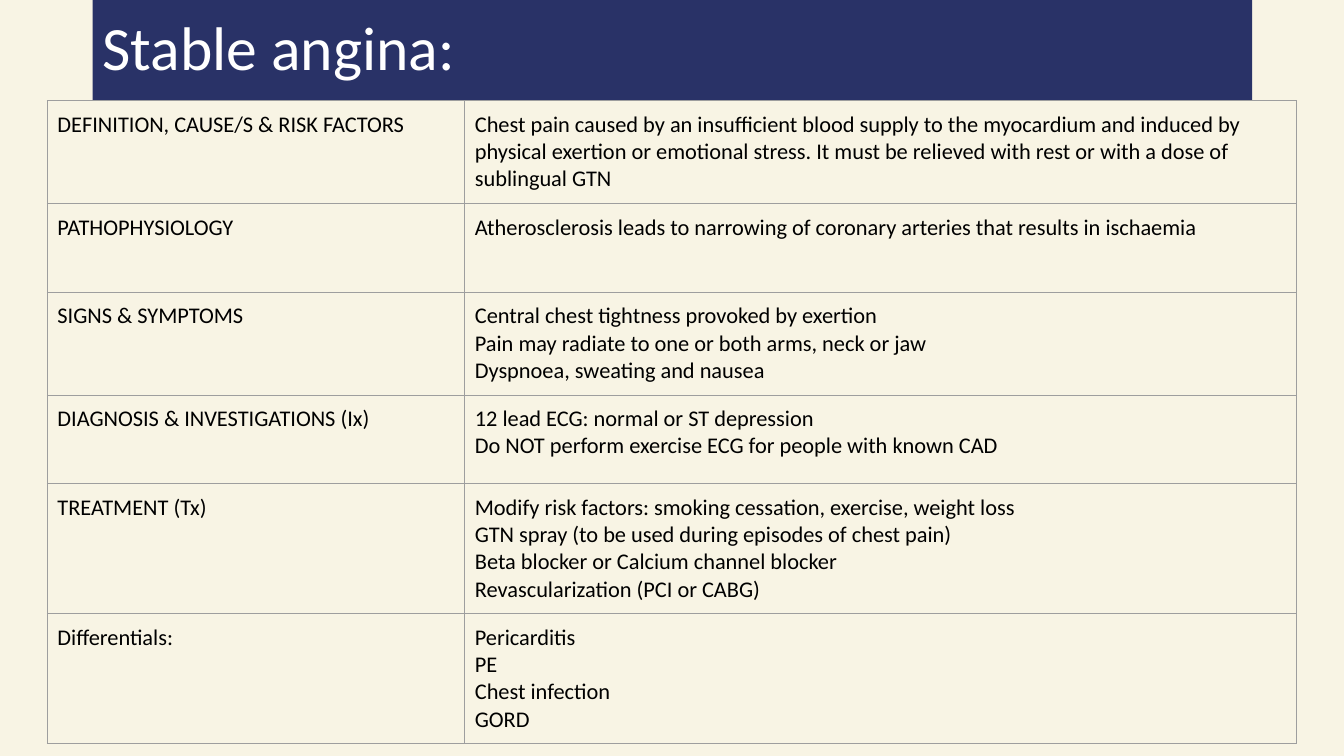
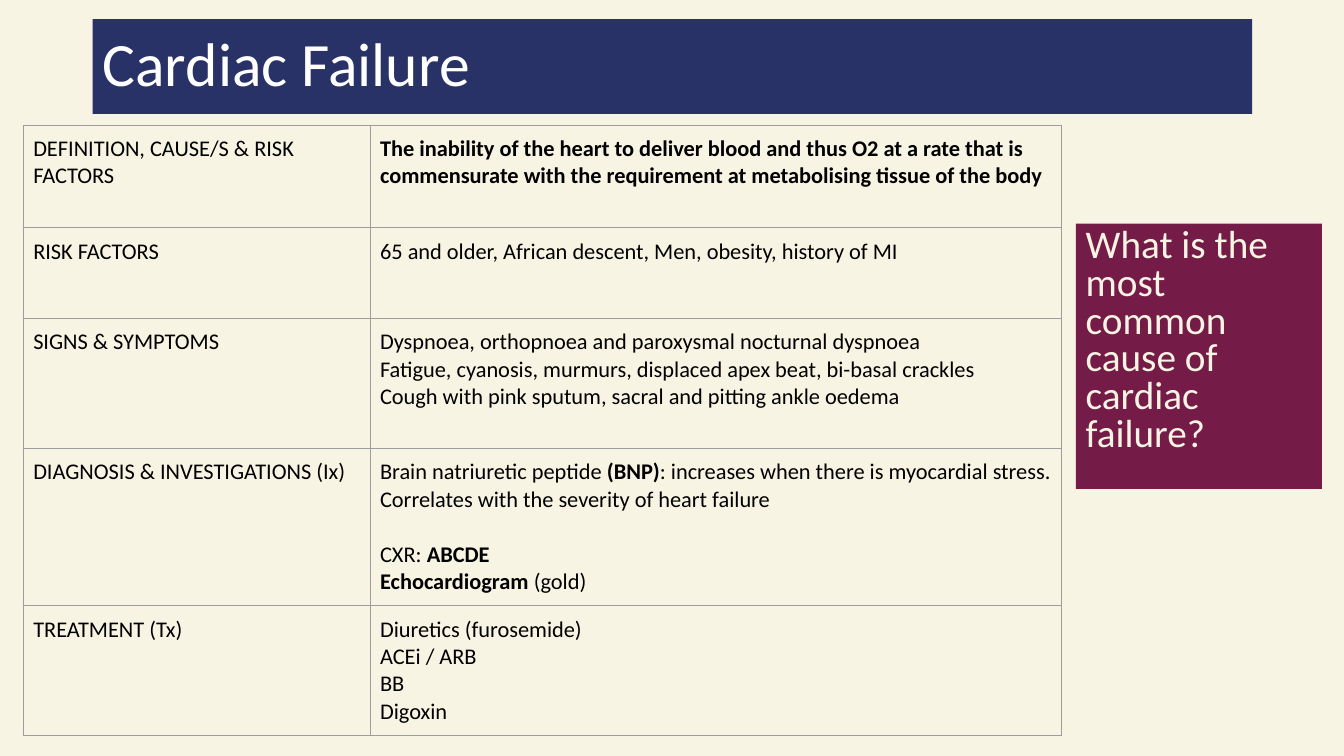
from dataclasses import dataclass

from lxml import etree
from pptx import Presentation
from pptx.dml.color import RGBColor
from pptx.enum import shapes, text
from pptx.oxml import ns
from pptx.util import Inches, Pt

CREAM = RGBColor(0xF8, 0xF4, 0xE4)
NAVY = RGBColor(0x29, 0x32, 0x67)
PLUM = RGBColor(0x74, 0x1B, 0x47)
WHITE = RGBColor(0xFF, 0xFF, 0xFF)
BLACK = RGBColor(0x00, 0x00, 0x00)
GREY = RGBColor(0x9E, 0x9E, 0x9E)

FONT = "Calibri"
BODY_SIZE = 16
BLANK_LAYOUT = 6
BOLD_MARK = "**"
GAP_MARK = "^"  # opens a line that stands one line lower
LINE_GAP = Pt(19.5)


@dataclass(frozen=True)
class Band:
    """A filled rectangle with one paragraph of text."""
    left: float
    top: float
    width: float
    height: float
    wording: str
    fill: RGBColor
    colour: RGBColor
    size: int
    line_spacing: float
    anchor: text.MSO_ANCHOR
    space_before: int = 0


@dataclass(frozen=True)
class Row:
    height: float
    heading: str
    details: tuple[str, ...]


@dataclass(frozen=True)
class Sheet:
    """A table of one condition; BOLD_MARK encloses bold words."""
    left: float
    top: float
    columns: tuple[float, float]
    rows: tuple[Row, ...]


def title_band(wording: str, top: float, height: float) -> Band:
    return Band(0.92, top, 11.5, height, wording, NAVY, WHITE, 44, 0.9,
                text.MSO_ANCHOR.MIDDLE)


ANGINA_TITLE = title_band("Stable angina:", 0, 1)
ANGINA = Sheet(0.47, 1, (4.14, 8.25), (
    Row(1.02, "DEFINITION, CAUSE/S & RISK FACTORS", (
        "Chest pain caused by an insufficient blood supply to the myocardium "
        "and induced by physical exertion or emotional stress. It must be "
        "relieved with rest or with a dose of sublingual GTN",)),
    Row(0.88, "PATHOPHYSIOLOGY", (
        "Atherosclerosis leads to narrowing of coronary arteries that results "
        "in ischaemia",)),
    Row(1.02, "SIGNS & SYMPTOMS", (
        "Central chest tightness provoked by exertion",
        "Pain may radiate to one or both arms, neck or jaw",
        "Dyspnoea, sweating and nausea")),
    Row(0.88, "DIAGNOSIS & INVESTIGATIONS (Ix)", (
        "12 lead ECG: normal or ST depression",
        "Do NOT perform exercise ECG for people with known CAD")),
    Row(1.29, "TREATMENT (Tx)", (
        "Modify risk factors: smoking cessation, exercise, weight loss",
        "GTN spray (to be used during episodes of chest pain)",
        "Beta blocker or Calcium channel blocker",
        "Revascularization (PCI or CABG)")),
    Row(1.29, "Differentials:", (
        "Pericarditis", "PE", "Chest infection", "GORD")),
))

FAILURE_TITLE = title_band("Cardiac Failure", 0.19, 0.94)
FAILURE_QUESTION = Band(
    10.67, 2.22, 2.44, 2.63,
    "What is the most common cause of cardiac failure?",
    PLUM, CREAM, 28, 0.8, text.MSO_ANCHOR.TOP, space_before=10)
FAILURE = Sheet(0.23, 1.24, (3.44, 6.86), (
    Row(1.02, "DEFINITION, CAUSE/S & RISK FACTORS", (
        "**The inability of the heart to deliver blood and thus O2 at a rate "
        "that is commensurate with the requirement at metabolising tissue of "
        "the body**",)),
    Row(0.9, "RISK FACTORS", (
        "65 and older, African descent, Men, obesity, history of MI",)),
    Row(1.29, "SIGNS & SYMPTOMS", (
        "Dyspnoea, orthopnoea and paroxysmal nocturnal dyspnoea",
        "Fatigue, cyanosis, murmurs, displaced apex beat, bi-basal crackles",
        "Cough with pink sputum, sacral and pitting ankle oedema")),
    Row(1.56, "DIAGNOSIS & INVESTIGATIONS (Ix)", (
        "Brain natriuretic peptide **(BNP)**: increases when there is "
        "myocardial stress. Correlates with the severity of heart failure",
        "^CXR: **ABCDE**",
        "**Echocardiogram** (gold)")),
    Row(1.29, "TREATMENT (Tx)", (
        "Diuretics (furosemide)", "ACEi / ARB", "BB", "Digoxin")),
))


def add_run(paragraph, wording: str, size: int, colour: RGBColor,
            bold: bool = False) -> None:
    run = paragraph.add_run()
    run.text = wording
    run.font.name = FONT
    run.font.size = Pt(size)
    run.font.bold = bold
    run.font.color.rgb = colour


def draw_band(slide, band: Band) -> None:
    shape = slide.shapes.add_shape(
        shapes.MSO_SHAPE.RECTANGLE, Inches(band.left), Inches(band.top),
        Inches(band.width), Inches(band.height))
    shape.shadow.inherit = False
    shape.fill.solid()
    shape.fill.fore_color.rgb = band.fill
    shape.line.fill.background()
    frame = shape.text_frame
    frame.word_wrap = True
    frame.vertical_anchor = band.anchor
    paragraph = frame.paragraphs[0]
    paragraph.alignment = text.PP_ALIGN.LEFT
    paragraph.line_spacing = band.line_spacing
    paragraph.space_before = Pt(band.space_before)
    add_run(paragraph, band.wording, band.size, band.colour)


def add_borders(cell) -> None:
    properties = cell._tc.get_or_add_tcPr()
    for place, side in enumerate(("lnL", "lnR", "lnT", "lnB")):
        line = etree.Element(ns.qn(f"a:{side}"), w=str(Pt(0.75)))
        fill = etree.SubElement(line, ns.qn("a:solidFill"))
        etree.SubElement(fill, ns.qn("a:srgbClr"), val=str(GREY))
        properties.insert(place, line)


def fill_cell(cell, lines: tuple[str, ...]) -> None:
    cell.fill.background()
    add_borders(cell)
    cell.margin_left = cell.margin_right = Inches(0.1)
    cell.margin_top = cell.margin_bottom = Inches(0.1)
    frame = cell.text_frame
    for number, line in enumerate(lines):
        paragraph = frame.add_paragraph() if number else frame.paragraphs[0]
        if line.startswith(GAP_MARK):
            paragraph.space_before = LINE_GAP
        pieces = line.removeprefix(GAP_MARK).split(BOLD_MARK)
        for position, piece in enumerate(pieces):
            if piece:
                add_run(paragraph, piece, BODY_SIZE, BLACK,
                        bold=position % 2 == 1)


def draw_sheet(slide, sheet: Sheet) -> None:
    table = slide.shapes.add_table(
        len(sheet.rows), len(sheet.columns),
        Inches(sheet.left), Inches(sheet.top), Inches(sum(sheet.columns)),
        Inches(sum(row.height for row in sheet.rows))).table
    table.first_row = table.horz_banding = False
    for column, width in zip(table.columns, sheet.columns):
        column.width = Inches(width)
    for number, row in enumerate(sheet.rows):
        table.rows[number].height = Inches(row.height)
        fill_cell(table.cell(number, 0), (row.heading,))
        fill_cell(table.cell(number, 1), row.details)


def main() -> None:
    deck = Presentation()
    deck.slide_width = Inches(13.33)
    deck.slide_height = Inches(7.5)
    background = deck.slide_master.background.fill
    background.solid()
    background.fore_color.rgb = CREAM

    for bands, sheet in (
        ((ANGINA_TITLE,), ANGINA),
        ((FAILURE_TITLE, FAILURE_QUESTION), FAILURE),
    ):
        slide = deck.slides.add_slide(deck.slide_layouts[BLANK_LAYOUT])
        for band in bands:
            draw_band(slide, band)
        draw_sheet(slide, sheet)
    deck.save("out.pptx")


if __name__ == "__main__":
    main()
